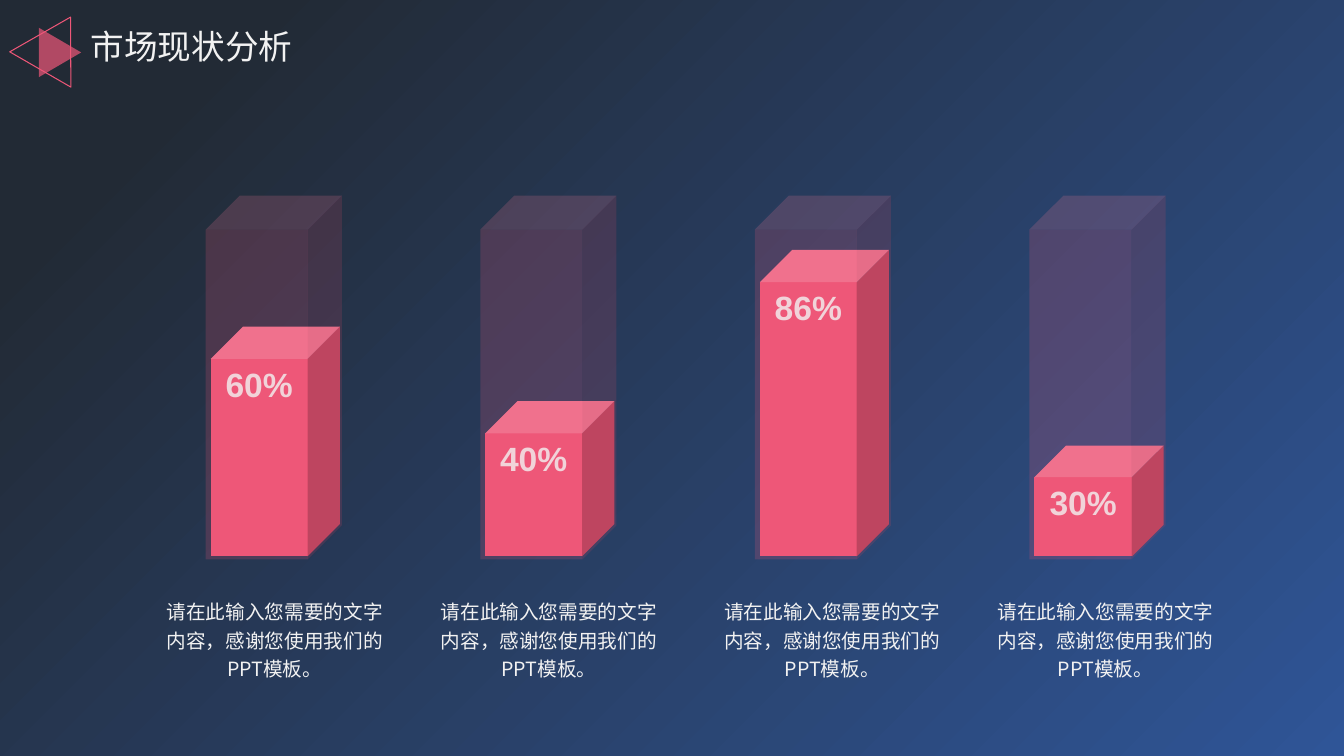
from pptx import Presentation
from pptx.dml.color import RGBColor
from pptx.enum.shapes import MSO_SHAPE
from pptx.enum.text import MSO_ANCHOR, PP_ALIGN
from pptx.oxml.ns import qn
from pptx.util import Inches, Pt
from lxml.etree import SubElement

TITLE = "市场现状分析"
CAPTION = "请在此输入您需要的文字内容，感谢您使用我们的PPT模板。"
# label, bar height, caption left
COLUMNS = [("60%", 2.28, 1.49), ("40%", 1.54, 4.21),
           ("86%", 3.04, 7.02), ("30%", 1.10, 9.73)]
PINK, WHITE = "EE5778", "F2F2F2"
CJK = "Noto Sans CJK SC"

FIRST_LEFT, LAST_LEFT = 2.04, 10.21
SHELL_TOP, SHELL_W, SHELL_H = 1.94, 1.35, 3.61
BAR_W, BAR_BOTTOM, BAR_INSET = 1.28, 5.52, 0.05
PITCH = (LAST_LEFT - FIRST_LEFT) / (len(COLUMNS) - 1)


def rgb(color):
    return RGBColor.from_string(color)


def write(tf, text, size=14, font=CJK, bold=False, align=PP_ALIGN.CENTER,
          anchor=MSO_ANCHOR.TOP, spacing=None, wrap=True):
    tf.word_wrap = wrap
    tf.vertical_anchor = anchor
    p = tf.paragraphs[0]
    p.alignment = align
    p.line_spacing = spacing
    r = p.add_run()
    r.text = text
    r.font.size = Pt(size)
    r.font.bold = bold
    r.font.name = font
    r.font.color.rgb = rgb(WHITE)
    SubElement(r.font._element, qn("a:ea")).set("typeface", font)


def add_solid(s, kind, x, y, w, h, fill=PINK, alpha=None, rotation=0):
    sp = s.shapes.add_shape(kind, Inches(x), Inches(y), Inches(w), Inches(h))
    sp.shadow.inherit = False
    sp.rotation = rotation
    sp.line.fill.background()
    if fill is None:
        sp.fill.background()
        return sp
    sp.fill.solid()
    sp.fill.fore_color.rgb = rgb(fill)
    if alpha is not None:
        clr = sp._element.spPr.find(qn("a:solidFill"))[0]
        SubElement(clr, qn("a:alpha")).set("val", str(alpha * 1000))
    return sp


prs = Presentation()
prs.slide_width, prs.slide_height = Inches(13.33), Inches(7.5)
s = prs.slides.add_slide(prs.slide_layouts[5])

# Background gradient
bg = s.background.fill
bg.gradient()
bg.gradient_angle = 315
for stop, (position, color) in zip(bg.gradient_stops, [(0.13, "222A35"), (1, "2F5597")]):
    stop.position = position
    stop.color.rgb = rgb(color)

# Title with its triangle emblem
add_solid(s, MSO_SHAPE.ISOSCELES_TRIANGLE, 0.35, 0.31, 0.49, 0.42, alpha=70, rotation=90)
outline = add_solid(s, MSO_SHAPE.ISOSCELES_TRIANGLE, 0.2, 0.13, 0.7, 0.6, fill=None, rotation=30)
outline.line.color.rgb = rgb(PINK)
outline.line.width = Pt(0)
title = s.shapes.title
title.left, title.top, title.width, title.height = map(Inches, (0.8, 0.21, 2.22, 0.5))
write(title.text_frame, TITLE, size=24, align=PP_ALIGN.LEFT, wrap=False)

# Columns: solid bar, translucent shell over it, caption below
for i, (label, height, caption_left) in enumerate(COLUMNS):
    left = FIRST_LEFT + i * PITCH
    bar = add_solid(s, MSO_SHAPE.CUBE, left + BAR_INSET, BAR_BOTTOM - height, BAR_W, height)
    bar.adjustments[0] = 0.285 if label == "30%" else 0.25
    write(bar.text_frame, label, size=24, font="Arial", bold=True)
    add_solid(s, MSO_SHAPE.CUBE, left, SHELL_TOP, SHELL_W, SHELL_H, alpha=20)
    caption = s.shapes.add_textbox(Inches(caption_left), Inches(5.86), Inches(2.47), Inches(0.91))
    write(caption.text_frame, CAPTION, spacing=1.2)

prs.save("out.pptx")
